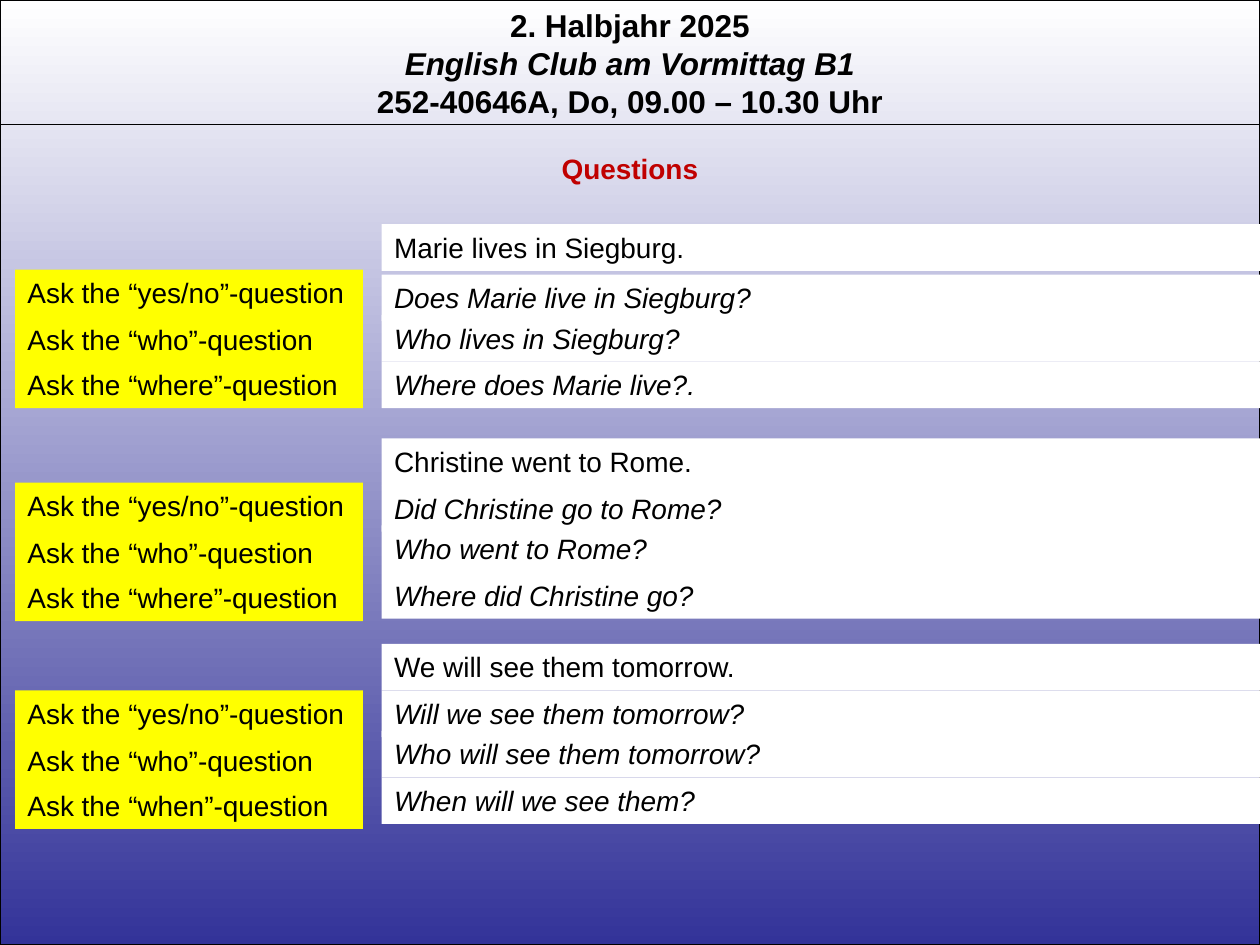
from dataclasses import dataclass

from lxml.etree import SubElement
from pptx import Presentation
from pptx.dml.color import RGBColor
from pptx.enum.shapes import MSO_CONNECTOR, MSO_SHAPE
from pptx.enum.text import MSO_ANCHOR, MSO_AUTO_SIZE, PP_ALIGN as Align
from pptx.oxml.ns import qn
from pptx.util import Inches, Pt

BLACK = RGBColor(0x00, 0x00, 0x00)
WHITE = RGBColor(0xFF, 0xFF, 0xFF)
YELLOW = RGBColor(0xFF, 0xFF, 0x00)
RED = RGBColor(0xC0, 0x00, 0x00)
INDIGO = RGBColor(0x33, 0x33, 0x99)

# The grid has 100 columns and 75 rows of square cells.
COLUMNS, ROWS = 100, 75
CELL = Inches(10) / COLUMNS
ROW_HEIGHT = 3.7
PROMPT_STEPS = (0, 3.7, 7.3)
ANSWER_STEPS = (0, 3.2, 6.9)
HAIRLINE = Pt(0.75)


@dataclass(frozen=True)
class Column:
    left: float
    width: float


@dataclass(frozen=True)
class Exercise:
    statement: str
    question_words: tuple[str, ...]
    answers: tuple[str, ...]
    statement_top: float
    prompts_top: float
    answers_top: float


FULL = Column(0, COLUMNS)
PROMPTS = Column(1.2, 27.6)
SENTENCES = Column(30.3, 69.7)

EXERCISES = (
    Exercise(
        "Marie lives in Siegburg.",
        ("yes/no", "who", "where"),
        ("Does Marie live in Siegburg?", "Who lives in Siegburg?",
         "Where does Marie live?."),
        17.8, 21.4, 21.8,
    ),
    Exercise(
        "Christine went to Rome.",
        ("yes/no", "who", "where"),
        ("Did Christine go to Rome?", "Who went to Rome?",
         "Where did Christine go?"),
        34.8, 38.3, 38.5,
    ),
    Exercise(
        "We will see them tomorrow.",
        ("yes/no", "who", "when"),
        ("Will we see them tomorrow?", "Who will see them tomorrow?",
         "When will we see them?"),
        51.1, 54.8, 54.8,
    ),
)


def cells(count: float) -> int:
    return round(count * CELL)


def add_panel(slide, column: Column, top: float, height: float):
    panel = slide.shapes.add_shape(
        MSO_SHAPE.RECTANGLE, cells(column.left), cells(top),
        cells(column.width), cells(height))
    panel.shadow.inherit = False
    return panel


def add_text(slide, lines, column: Column, top: float, height=ROW_HEIGHT, *,
             fill=None, size=16, color=BLACK, bold=False, italics=(False,),
             align=Align.LEFT) -> None:
    """Write one paragraph per line; italics holds one flag per line."""
    panel = add_panel(slide, column, top, height)
    panel.line.fill.background()
    if fill is None:
        panel.fill.background()
    else:
        panel.fill.solid()
        panel.fill.fore_color.rgb = fill
    frame = panel.text_frame
    frame.word_wrap = True
    frame.auto_size = MSO_AUTO_SIZE.SHAPE_TO_FIT_TEXT
    frame.vertical_anchor = MSO_ANCHOR.TOP
    frame.text = "\n".join(lines)
    for paragraph, italic in zip(frame.paragraphs, italics):
        paragraph.alignment = align
        font = paragraph.font
        font.name, font.size = "Arial", Pt(size)
        font.bold, font.italic = bold, italic
        font.color.rgb = color


def add_backdrop(slide) -> None:
    backdrop = add_panel(slide, FULL, 0, ROWS)
    backdrop.fill.gradient()
    backdrop.fill.gradient_angle = 270
    for stop, color in zip(backdrop.fill.gradient_stops, (WHITE, INDIGO)):
        stop.color.rgb = color
    backdrop.line.color.rgb = BLACK
    backdrop.line.width = HAIRLINE


def add_header(slide) -> None:
    add_text(slide,
             ("2. Halbjahr 2025", "English Club am Vormittag B1",
              "252-40646A, Do, 09.00 – 10.30 Uhr"),
             FULL, 0, 10.1, size=18, bold=True,
             italics=(False, True, False), align=Align.CENTER)
    rule = slide.shapes.add_connector(
        MSO_CONNECTOR.STRAIGHT, 0, cells(9.9), cells(COLUMNS), cells(9.9))
    rule.line.color.rgb = BLACK
    rule.line.width = HAIRLINE
    SubElement(rule._element.spPr, qn("a:effectLst"))


def add_exercise(slide, exercise: Exercise) -> None:
    add_text(slide, (exercise.statement,), SENTENCES, exercise.statement_top,
             fill=WHITE)
    for word, step in zip(exercise.question_words, PROMPT_STEPS):
        add_text(slide, (f"Ask the “{word}”-question",), PROMPTS,
                 exercise.prompts_top + step, fill=YELLOW)
    for answer, step in zip(exercise.answers, ANSWER_STEPS):
        add_text(slide, (answer,), SENTENCES, exercise.answers_top + step,
                 fill=WHITE, italics=(True,))


def main() -> None:
    deck = Presentation()
    deck.slide_width, deck.slide_height = cells(COLUMNS), cells(ROWS)
    slide = deck.slides.add_slide(deck.slide_layouts[6])
    add_backdrop(slide)
    add_header(slide)
    add_text(slide, ("Questions",), FULL, 11.5, color=RED, bold=True,
             align=Align.CENTER)
    for exercise in EXERCISES:
        add_exercise(slide, exercise)
    deck.save("out.pptx")


if __name__ == "__main__":
    main()
